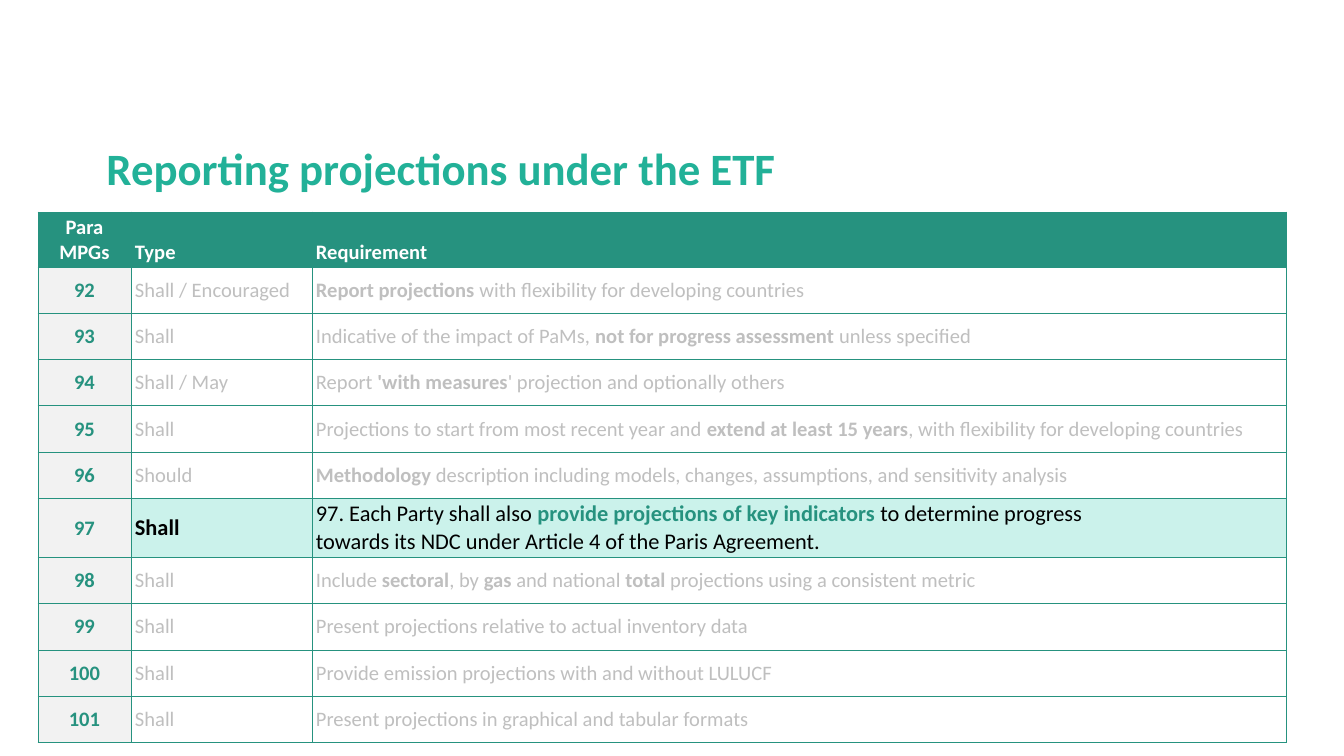
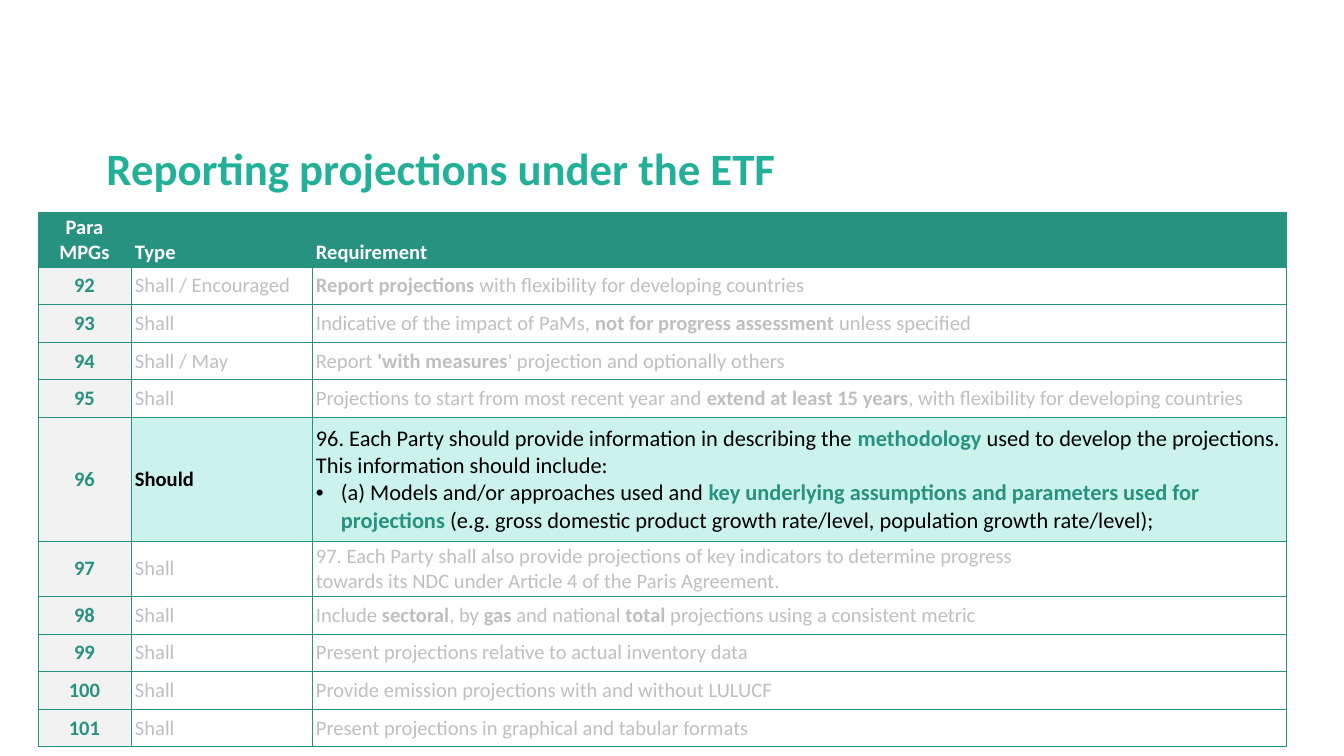
from dataclasses import dataclass

from lxml.etree import SubElement
from pptx import Presentation
from pptx.dml.color import RGBColor
from pptx.enum.text import MSO_ANCHOR, MSO_AUTO_SIZE, PP_ALIGN
from pptx.oxml.ns import qn
from pptx.util import Pt

# Content: **…** marks emphasis, a leading "• " marks a bullet
TITLE = "Reporting projections under the ETF"
HEADINGS = ("Para MPGs", "Type", "Requirement")
REQUIREMENTS = {
    "92": ("Shall / Encouraged", "**Report projections **with flexibility for developing countries"),
    "93": ("Shall", "Indicative of the impact of PaMs, **not for progress assessment **unless specified"),
    "94": ("Shall / May", "Report **'with measures**' projection and optionally others"),
    "95": ("Shall", "Projections to start from most recent year and **extend at least 15 years**, "
                    "with flexibility for developing countries"),
    "96": ("Should", "**Methodology** description including models, changes, assumptions, "
                     "and sensitivity analysis"),
    "97": ("Shall", "97. Each Party shall also provide projections of key indicators "
                    "to determine progress\n"
                    "towards its NDC under Article 4 of the Paris Agreement."),
    "98": ("Shall", "Include **sectoral**, by **gas** and national **total** projections "
                    "using a consistent metric"),
    "99": ("Shall", "Present projections relative to actual inventory data"),
    "100": ("Shall", "Provide emission projections with and without LULUCF"),
    "101": ("Shall", "Present projections in graphical and tabular formats"),
}
# Each slide highlights one paragraph; fixed heights in px, other rows share the rest
SLIDES = [
    {"focus": "97", "type_size": 12, "table_height": 531, "fixed_rows": {"97": 59},
     "text": "97. Each Party shall also **provide projections of key indicators **"
             "to determine progress\n"
             "towards its NDC under Article 4 of the Paris Agreement."},
    {"focus": "96", "type_size": 11, "table_height": 535, "fixed_rows": {"96": 124, "97": 55},
     "text": "96. Each Party should provide information in describing the **methodology **"
             "used to develop the projections. This information should include:\n"
             "• (a) Models and/or approaches used and **key underlying assumptions and "
             "parameters used for projections **(e.g. gross domestic product growth "
             "rate/level, population growth rate/level);"},
]


@dataclass(frozen=True)
class Theme:
    font: str = "Calibri"
    title: str = "22B198"
    accent: str = "26927F"
    white: str = "FFFFFF"
    black: str = "000000"
    muted: str = "BFBFBF"
    number_fill: str = "F2F2F2"
    focus_fill: str = "CBF2EB"
    title_size: int = 24
    body_size: int = 11
    focus_size: int = 12
    border: float = 0.5


THEME = Theme()

# Layout in px
PX = 914400 / 134.4
SLIDE_SIZE = (1344, 756)
TITLE_BOX = (93, 138, 1158, 66)
TABLE_LEFT, TABLE_TOP = 38, 212
COLUMNS = (93, 181, 975)
HEADER_HEIGHT = 55
INSET_X, INSET_Y = 4, 2
BULLET_INDENT = 25


def emu(px):
    return round(px * PX)


def apply(target, values):
    for name, value in values.items():
        setattr(target, name, value)


def add_run(paragraph, text, size, color, bold):
    run = paragraph.add_run()
    run.text = text
    apply(run.font, {"name": THEME.font, "size": Pt(size), "bold": bold})
    run.font.color.rgb = RGBColor.from_string(color)


def add_bullet(paragraph):
    properties = paragraph._p.get_or_add_pPr()
    properties.set("marL", str(emu(BULLET_INDENT)))
    properties.set("indent", str(-emu(BULLET_INDENT)))
    SubElement(properties, qn("a:buFont"), typeface="Arial")
    SubElement(properties, qn("a:buChar"), char="•")


def add_borders(cell):
    properties = cell._tc.get_or_add_tcPr()
    for side in ("L", "R", "T", "B"):
        line = SubElement(properties, qn(f"a:ln{side}"), w=str(Pt(THEME.border)))
        SubElement(SubElement(line, qn("a:solidFill")), qn("a:srgbClr"), val=THEME.accent)


def fill_cell(cell, text, fill, color, size=THEME.body_size, bold=False,
              strong=None, align=PP_ALIGN.LEFT, anchor=MSO_ANCHOR.MIDDLE):
    add_borders(cell)
    cell.fill.solid()
    cell.fill.fore_color.rgb = RGBColor.from_string(fill)
    apply(cell, {"vertical_anchor": anchor,
                 "margin_left": emu(INSET_X), "margin_right": emu(INSET_X),
                 "margin_top": emu(INSET_Y), "margin_bottom": emu(INSET_Y)})
    for index, line in enumerate(text.split("\n")):
        frame = cell.text_frame
        paragraph = frame.add_paragraph() if index else frame.paragraphs[0]
        if line.startswith("• "):
            add_bullet(paragraph)
        paragraph.alignment = align
        for part, words in enumerate(line.removeprefix("• ").split("**")):
            emphasis = part % 2 == 1
            if words:
                add_run(paragraph, words, size,
                        strong if emphasis and strong else color, bold or emphasis)


def add_title(slide):
    title = slide.shapes.title
    apply(title, dict(zip(("left", "top", "width", "height"), map(emu, TITLE_BOX))))
    apply(title.text_frame, {"vertical_anchor": MSO_ANCHOR.MIDDLE, "word_wrap": True,
                             "auto_size": MSO_AUTO_SIZE.NONE})
    heading = title.text_frame.paragraphs[0]
    apply(heading, {"alignment": PP_ALIGN.LEFT, "line_spacing": 0.9})
    add_run(heading, TITLE, THEME.title_size, THEME.title, True)


def add_requirements(slide, view):
    # Grid sizes
    fixed = view["fixed_rows"]
    spare = view["table_height"] - HEADER_HEIGHT - sum(fixed.values())
    shared = spare / (len(REQUIREMENTS) - len(fixed))
    heights = [HEADER_HEIGHT] + [fixed.get(number, shared) for number in REQUIREMENTS]
    table = slide.shapes.add_table(
        len(heights), len(COLUMNS), emu(TABLE_LEFT), emu(TABLE_TOP),
        emu(sum(COLUMNS)), emu(view["table_height"])).table
    table.horz_banding = False
    for column, width in zip(table.columns, COLUMNS):
        column.width = emu(width)
    for row, height in zip(table.rows, heights):
        row.height = emu(height)

    # Header row
    for index, heading in enumerate(HEADINGS):
        fill_cell(table.cell(0, index), heading, THEME.accent, THEME.white, bold=True,
                  align=PP_ALIGN.LEFT if index else PP_ALIGN.CENTER,
                  anchor=MSO_ANCHOR.BOTTOM)

    # Requirement rows
    for index, (number, (kind, summary)) in enumerate(REQUIREMENTS.items(), 1):
        number_cell, kind_cell, summary_cell = table.rows[index].cells
        fill_cell(number_cell, number, THEME.number_fill, THEME.accent,
                  bold=True, align=PP_ALIGN.CENTER)
        if number == view["focus"]:
            fill_cell(kind_cell, kind, THEME.focus_fill, THEME.black,
                      view["type_size"], bold=True)
            fill_cell(summary_cell, view["text"], THEME.focus_fill, THEME.black,
                      THEME.focus_size, strong=THEME.accent)
        else:
            fill_cell(kind_cell, kind, THEME.white, THEME.muted)
            fill_cell(summary_cell, summary, THEME.white, THEME.muted)


def main():
    deck = Presentation()
    deck.slide_width, deck.slide_height = map(emu, SLIDE_SIZE)
    title_only = deck.slide_layouts[5]
    for view in SLIDES:
        slide = deck.slides.add_slide(title_only)
        add_title(slide)
        add_requirements(slide, view)
    deck.save("out.pptx")


if __name__ == "__main__":
    main()
